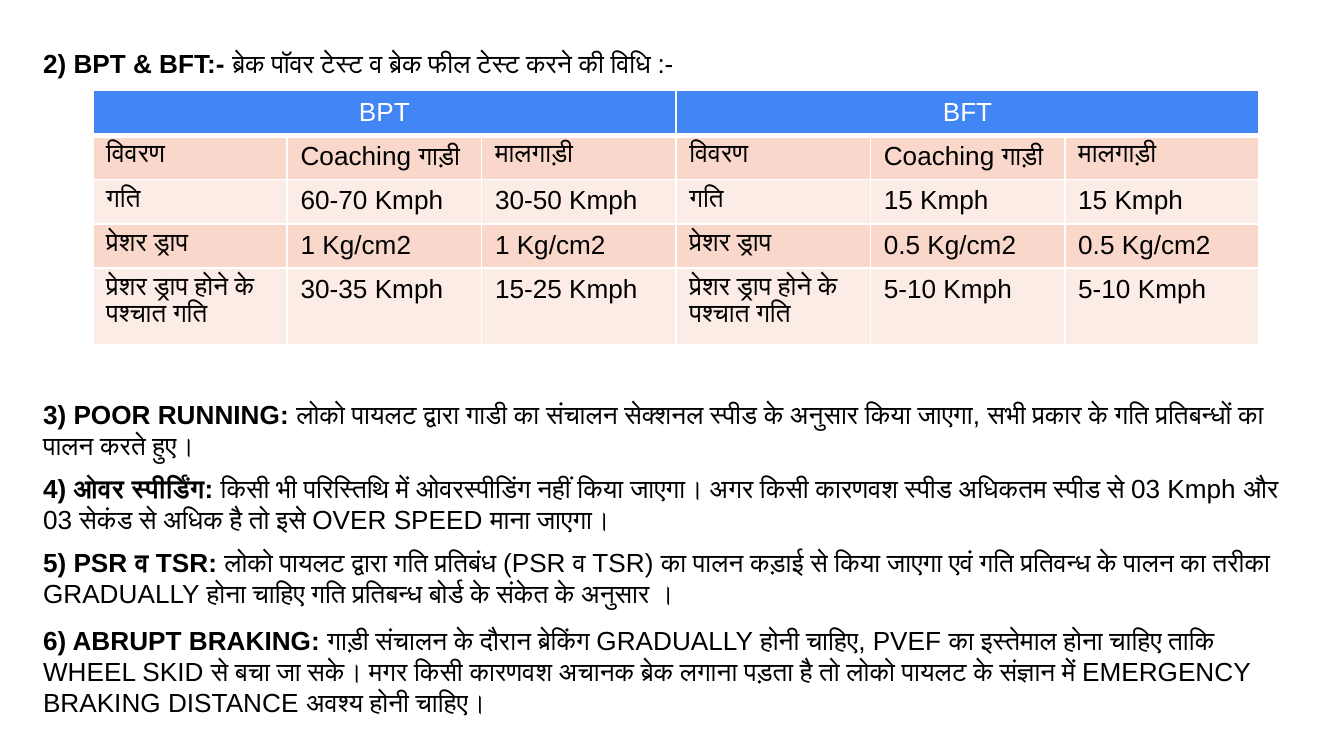
"""Build a slide on brake tests and the driving rules that follow them."""
from typing import NamedTuple

from lxml import etree
from pptx import Presentation
from pptx.dml.color import RGBColor
from pptx.enum.text import MSO_ANCHOR, MSO_AUTO_SIZE, PP_ALIGN
from pptx.oxml.ns import qn
from pptx.util import Inches, Pt

LEFT, CENTER = PP_ALIGN.LEFT, PP_ALIGN.CENTER
TOP, NO_FIT = MSO_ANCHOR.TOP, MSO_AUTO_SIZE.NONE
BLACK = RGBColor(0x00, 0x00, 0x00)
WHITE = RGBColor(0xFF, 0xFF, 0xFF)
BLUE = RGBColor(0x42, 0x85, 0xF4)
PEACH = RGBColor(0xF9, 0xD7, 0xCA)
PALE_PEACH = RGBColor(0xFC, 0xEC, 0xE6)
FONT, SIZE = "Arial", 14
SLIDE_W = 10
SLIDE_H = SLIDE_W * 9 / 16
TEXT_X, TEXT_W = 0.022, 0.949
TABLE_X, TABLE_Y, TABLE_W = 0.069, 0.12, 0.868
ROW_H, LAST_ROW_H = 0.33, 0.57


class Box(NamedTuple):
    """Place on the slide, in shares of its width and height."""
    x: float
    y: float
    w: float
    h: float

    def lengths(self) -> tuple:
        """Return left, top, width and height as lengths."""
        return (Inches(self.x * SLIDE_W), Inches(self.y * SLIDE_H),
                Inches(self.w * SLIDE_W), Inches(self.h * SLIDE_H))


class Rule(NamedTuple):
    """A bold label, its explanation and the space above in points."""
    label: str
    text: str
    before: float = 0


class Test(NamedTuple):
    """A brake test with its values for coaching and goods trains."""
    name: str
    values: tuple


TITLE_BOX = Box(TEXT_X, 0.054, TEXT_W, 0.06)
BODY_BOX = Box(TEXT_X, 0.518, TEXT_W, 0.46)
HEADING = Rule("2) BPT & BFT:- ", "ब्रेक पॉवर टेस्ट व ब्रेक फील टेस्ट करने की विधि :-")
RULES = [
    Rule("3) POOR RUNNING: ",
         "लोको पायलट द्वारा गाडी का संचालन सेक्शनल स्पीड के अनुसार किया जाएगा, "
         "सभी प्रकार के गति प्रतिबन्धों का पालन करते हुए।"),
    Rule("4) ओवर स्पीर्डिंग: ",
         "किसी भी परिस्तिथि में ओवरस्पीडिंग नहीं किया जाएगा। अगर किसी कारणवश "
         "स्पीड अधिकतम स्पीड से 03 Kmph और 03 सेकंड से अधिक है तो इसे OVER SPEED "
         "माना जाएगा।", 6),
    Rule("5) PSR व TSR: ",
         "लोको पायलट द्वारा गति प्रतिबंध (PSR व TSR) का पालन कड़ाई से किया जाएगा "
         "एवं गति प्रतिवन्ध के पालन का तरीका GRADUALLY होना चाहिए गति प्रतिबन्ध "
         "बोर्ड के संकेत के अनुसार ।", 6),
    Rule("6) ABRUPT BRAKING: ",
         "गाड़ी संचालन के दौरान ब्रेकिंग GRADUALLY होनी चाहिए, PVEF का इस्तेमाल "
         "होना चाहिए ताकि WHEEL SKID से बचा जा सके। मगर किसी कारणवश अचानक ब्रेक "
         "लगाना पड़ता है तो लोको पायलट के संज्ञान में EMERGENCY BRAKING DISTANCE "
         "अवश्य होनी चाहिए।", 8),
]
ROW_LABELS = ("विवरण", "गति", "प्रेशर ड्राप", "प्रेशर ड्राप होने के पश्चात गति")
TRAINS = ("Coaching गाड़ी", "मालगाड़ी")
TESTS = [
    Test("BPT", (TRAINS, ("60-70 Kmph", "30-50 Kmph"), ("1 Kg/cm2", "1 Kg/cm2"),
                 ("30-35 Kmph", "15-25 Kmph"))),
    Test("BFT", (TRAINS, ("15 Kmph", "15 Kmph"), ("0.5 Kg/cm2", "0.5 Kg/cm2"),
                 ("5-10 Kmph", "5-10 Kmph"))),
]


def add_text(p, text: str, *, bold=False, color=BLACK, align=LEFT, before=0) -> None:
    """Add a formatted run to a paragraph."""
    p.alignment, p.line_spacing = align, 1.0
    p.space_before, p.space_after = Pt(before), Pt(0)
    r = p.add_run()
    r.text = text
    r.font.name, r.font.size, r.font.bold = FONT, Pt(SIZE), bold
    r.font.color.rgb = color


def fill_placeholder(sp, box: Box, rules: list) -> None:
    """Move a placeholder and write labelled rules without bullets."""
    sp.left, sp.top, sp.width, sp.height = box.lengths()
    tf = sp.text_frame
    tf.word_wrap, tf.auto_size, tf.vertical_anchor = True, NO_FIT, TOP
    for i, rule in enumerate(rules):
        p = tf.add_paragraph() if i else tf.paragraphs[0]
        pPr = p._p.get_or_add_pPr()
        pPr.set("marL", "0")
        pPr.set("indent", "0")
        etree.SubElement(pPr, qn("a:buNone"))
        add_text(p, rule.label, bold=True, before=rule.before)
        add_text(p, rule.text, before=rule.before)


def set_borders(cell, bottom: float = 1) -> None:
    """Draw white lines round a cell, ahead of its fill."""
    tcPr = cell._tc.get_or_add_tcPr()
    for i, (side, width) in enumerate(zip("LRTB", (1, 1, 1, bottom))):
        ln = etree.Element(qn(f"a:ln{side}"), w=str(Pt(width)))
        solid = etree.SubElement(ln, qn("a:solidFill"))
        etree.SubElement(solid, qn("a:srgbClr"), val=str(WHITE))
        tcPr.insert(i, ln)


def fill_cell(cell, text: str, fill: RGBColor, *, bottom=1, **text_format) -> None:
    """Write, fill and outline one table cell."""
    add_text(cell.text_frame.paragraphs[0], text, **text_format)
    cell.fill.solid()
    cell.fill.fore_color.rgb = fill
    set_borders(cell, bottom)


def add_tests(s, tests: list) -> None:
    """Draw the tests side by side, three columns each."""
    rows, cols = 1 + len(ROW_LABELS), 3 * len(tests)
    heights = [ROW_H] * (rows - 1) + [LAST_ROW_H]
    box = Box(TABLE_X, TABLE_Y, TABLE_W, sum(heights) / SLIDE_H)
    table = s.shapes.add_table(rows, cols, *box.lengths()).table
    for row, height in zip(table.rows, heights):
        row.height = Inches(height)
    for t, test in enumerate(tests):
        first = 3 * t
        table.cell(0, first).merge(table.cell(0, first + 2))
        fill_cell(table.cell(0, first), test.name, BLUE, bottom=3, color=WHITE, align=CENTER)
        for i, (label, values) in enumerate(zip(ROW_LABELS, test.values), 1):
            for j, text in enumerate((label, *values)):
                fill_cell(table.cell(i, first + j), text, PEACH if i % 2 else PALE_PEACH)


def main() -> None:
    """Build and save the slide."""
    prs = Presentation()
    prs.slide_width, prs.slide_height = Inches(SLIDE_W), Inches(SLIDE_H)
    s = prs.slides.add_slide(prs.slide_layouts[1])
    fill_placeholder(s.shapes.title, TITLE_BOX, [HEADING])
    fill_placeholder(s.placeholders[1], BODY_BOX, RULES)
    add_tests(s, TESTS)
    prs.save("out.pptx")


if __name__ == "__main__":
    main()
